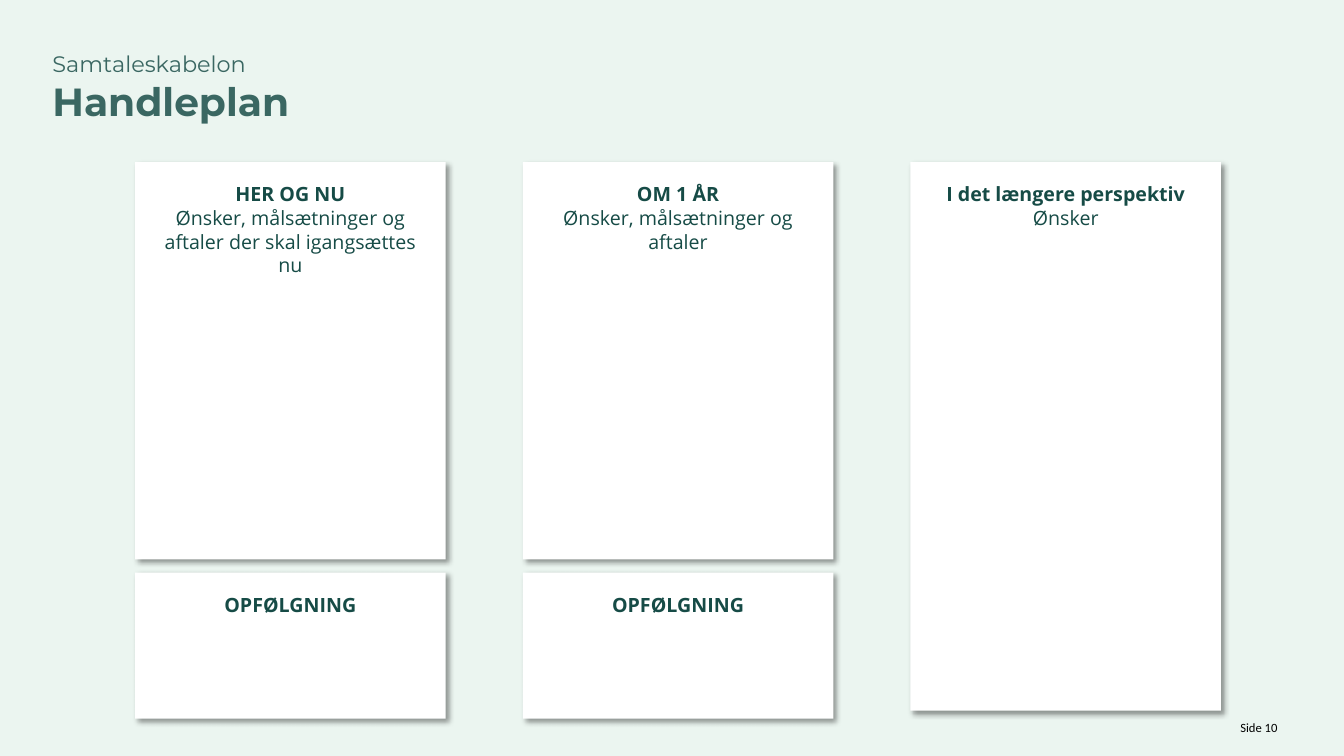
import pptx
import pptx.dml.color
import pptx.enum.shapes
import pptx.enum.text
import pptx.oxml
import pptx.oxml.ns
import pptx.util
from pptx.util import Inches

RGBColor = pptx.dml.color.RGBColor
Align = pptx.enum.text.PP_ALIGN

MINT = RGBColor(0xEB, 0xF5, 0xF0)
WHITE = RGBColor(0xFF, 0xFF, 0xFF)
BLACK = RGBColor(0x00, 0x00, 0x00)
DARK_GREEN = RGBColor(0x16, 0x4B, 0x46)
TITLE_GREEN = RGBColor(0x3A, 0x67, 0x62)

COLUMN_LEFT = 1.34
COLUMN_STEP = 3.845
CARD_WIDTH = 3.08
PLAN_TOP = 1.61
PLAN_HEIGHT = 3.94
FOLLOW_UP_TOP = 5.68
FOLLOW_UP_HEIGHT = 1.45
LONG_TERM_HEIGHT = 5.44

SHADOW_XML = (
    '<a:outerShdw {} blurRad="50800" dist="38100" dir="2700000" algn="tl" rotWithShape="0">'
    '<a:srgbClr val="000000"><a:alpha val="40000"/></a:srgbClr></a:outerShdw>'
).format(pptx.oxml.ns.nsdecls("a"))


def prepare_frame(shape, margin=0):
    """Make the text wrap from the top, with equal margins, and return its frame."""
    frame = shape.text_frame
    frame.word_wrap = True
    frame.vertical_anchor = pptx.enum.text.MSO_ANCHOR.TOP
    frame.margin_left = frame.margin_right = Inches(margin)
    frame.margin_top = frame.margin_bottom = Inches(margin)
    return frame


def write_text(para, text, *, font, size, color, bold=False, align=Align.LEFT):
    para.alignment = align
    span = para.add_run()
    span.text = text
    span.font.name = font
    span.font.size = pptx.util.Pt(size)
    span.font.bold = bold
    span.font.color.rgb = color


def add_text_box(page, left, top, width, height):
    box = page.shapes.add_textbox(Inches(left), Inches(top), Inches(width), Inches(height))
    return prepare_frame(box)


def add_card(page, column, top, height, heading, body=None):
    """Add a white shadowed card with a bold heading and an optional body."""
    card = page.shapes.add_shape(
        pptx.enum.shapes.MSO_SHAPE.RECTANGLE,
        Inches(COLUMN_LEFT + column * COLUMN_STEP), Inches(top),
        Inches(CARD_WIDTH), Inches(height))
    card.fill.solid()
    card.fill.fore_color.rgb = WHITE
    card.line.fill.background()
    card.shadow.inherit = False
    effects = card._element.spPr.find(pptx.oxml.ns.qn("a:effectLst"))
    effects.append(pptx.oxml.parse_xml(SHADOW_XML))

    frame = prepare_frame(card, margin=0.2)
    style = dict(font="Open Sans", size=14, color=DARK_GREEN, align=Align.CENTER)
    write_text(frame.paragraphs[0], heading, bold=True, **style)
    if body:
        write_text(frame.add_paragraph(), body, **style)


def add_title(page, kicker, title):
    frame = add_text_box(page, 0.52, 0.5, 8.08, 0.97)
    style = dict(font="Montserrat", color=TITLE_GREEN)
    write_text(frame.paragraphs[0], kicker, size=16, **style)
    write_text(frame.add_paragraph(), title, size=28, bold=True, **style)


def add_page_label(page, text):
    frame = add_text_box(page, 10.99, 7.14, 1.68, 0.16)
    write_text(frame.paragraphs[0], text, font="Calibri", size=9, color=BLACK, align=Align.RIGHT)


def main():
    deck = pptx.Presentation()
    deck.slide_width = Inches(13.33)
    deck.slide_height = Inches(7.5)
    page = deck.slides.add_slide(deck.slide_layouts[6])
    page.background.fill.solid()
    page.background.fill.fore_color.rgb = MINT

    add_title(page, "Samtaleskabelon", "Handleplan")
    plans = [
        ("HER OG NU", "Ønsker, målsætninger og aftaler der skal igangsættes nu"),
        ("OM 1 ÅR", "Ønsker, målsætninger og aftaler"),
    ]
    for column, (heading, body) in enumerate(plans):
        add_card(page, column, PLAN_TOP, PLAN_HEIGHT, heading, body)
        add_card(page, column, FOLLOW_UP_TOP, FOLLOW_UP_HEIGHT, "OPFØLGNING")
    add_card(page, len(plans), PLAN_TOP, LONG_TERM_HEIGHT, "I det længere perspektiv", "Ønsker")
    add_page_label(page, "Side 10")

    deck.save("out.pptx")


if __name__ == "__main__":
    main()
